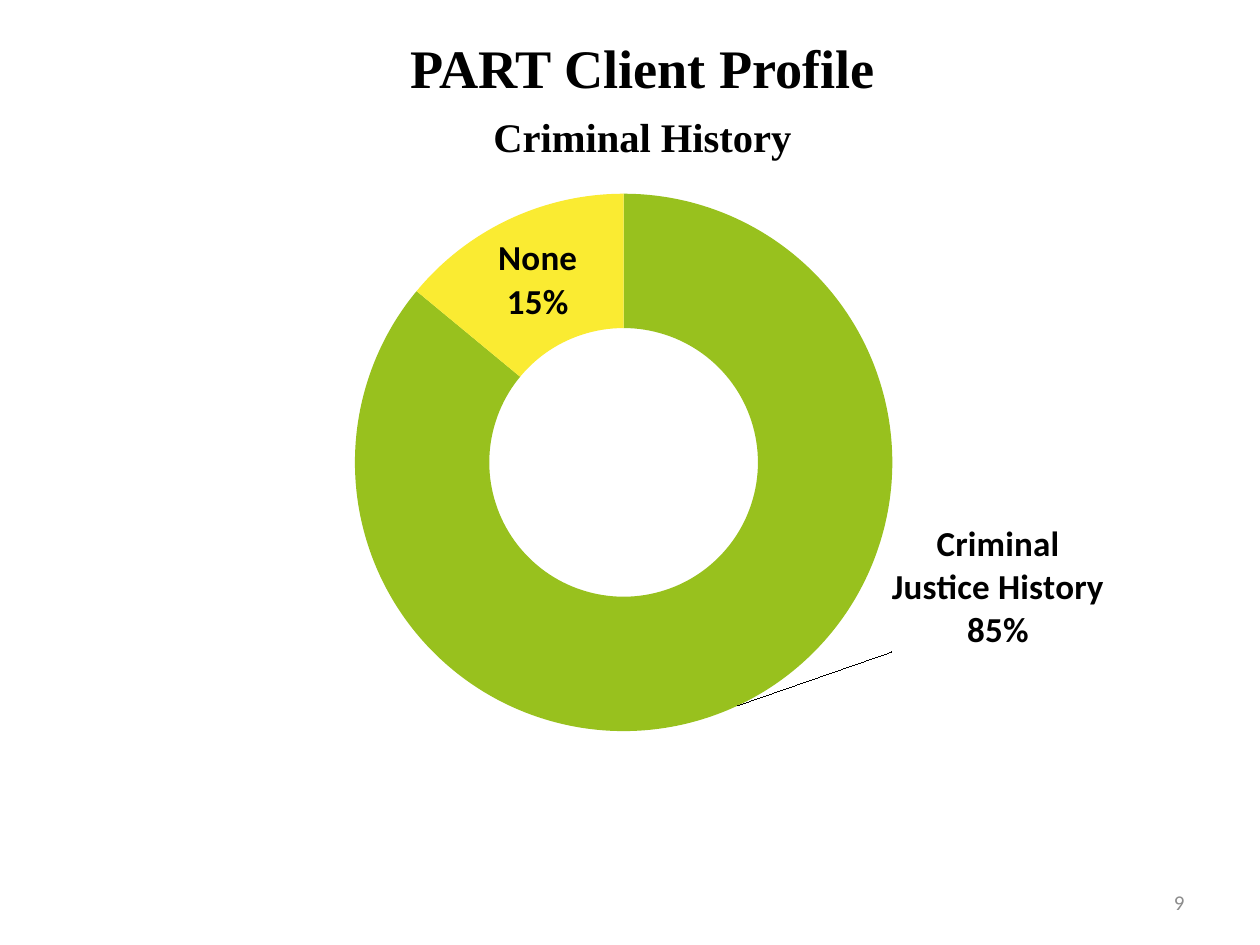
from dataclasses import dataclass

from lxml.etree import SubElement
from pptx import Presentation
from pptx.chart.data import CategoryChartData
from pptx.dml.color import RGBColor
from pptx.enum.chart import XL_CHART_TYPE
from pptx.enum.text import MSO_ANCHOR, PP_ALIGN
from pptx.oxml import parse_xml
from pptx.oxml.ns import nsdecls, qn
from pptx.util import Inches, Pt


@dataclass(frozen=True)
class Theme:
    heading_font: str = "Times New Roman"
    body_font: str = "Calibri"
    ink: str = "000000"
    muted: str = "8C8C8C"
    green: str = "98C11E"
    yellow: str = "FAEB32"
    title_size: float = 31
    subtitle_size: float = 23.2
    label_size: float = 20
    chart_size: float = 18
    number_size: float = 12


@dataclass(frozen=True)
class Area:
    left: float
    top: float
    width: float
    height: float

    def on(self, deck) -> tuple[int, int, int, int]:
        wide, high = deck.slide_width, deck.slide_height
        return (int(self.left * wide), int(self.top * high),
                int(self.width * wide), int(self.height * high))


@dataclass(frozen=True)
class Line:
    text: str
    font: str
    size: float
    color: str
    bold: bool = False
    before: float = 0


@dataclass(frozen=True)
class Segment:
    category: str
    share: str
    value: int
    color: str
    shift: tuple[float, float] | None = None


THEME = Theme()
HEADING = [
    Line("PART Client Profile", THEME.heading_font, THEME.title_size, THEME.ink, True),
    Line("Criminal History", THEME.heading_font, THEME.subtitle_size, THEME.ink, True, 7),
]
PAGE_NUMBER = [Line("9", THEME.body_font, THEME.number_size, THEME.muted)]
SEGMENTS = [
    Segment("Criminal Justice History", "85%", 86, THEME.green, (0.29, -0.09)),
    Segment("None", "15%", 14, THEME.yellow),
]
RING = {"x": 0.23, "y": 0.03, "w": 0.54, "h": 0.85}


def add_lines(frame, lines: list[Line], align: PP_ALIGN) -> None:
    """Fill a text frame with one paragraph per line."""
    for index, line in enumerate(lines):
        para = frame.add_paragraph() if index else frame.paragraphs[0]
        para.alignment = align
        if line.before:
            para.space_before = Pt(line.before)
        span = para.add_run()
        span.text = line.text
        span.font.name = line.font
        span.font.size = Pt(line.size)
        span.font.bold = line.bold
        span.font.color.rgb = RGBColor.from_string(line.color)


def add_text(deck, page, area: Area, lines: list[Line], align: PP_ALIGN,
             anchor: MSO_ANCHOR) -> None:
    """Place a wrapped text box on the page."""
    box = page.shapes.add_textbox(*area.on(deck))
    box.text_frame.word_wrap = True
    box.text_frame.vertical_anchor = anchor
    add_lines(box.text_frame, lines, align)


def manual_layout(**shares: float):
    """Return a chart layout element holding the given shares."""
    layout = parse_xml(f"<c:layout {nsdecls('c')}><c:manualLayout/></c:layout>")
    for name, share in shares.items():
        SubElement(layout[0], qn(f"c:{name}")).set("val", str(share))
    return layout


def style_segment(point, segment: Segment) -> None:
    """Color one segment and write its label."""
    point.format.fill.solid()
    point.format.fill.fore_color.rgb = RGBColor.from_string(segment.color)
    point.format.line.fill.background()
    label = point.data_label
    lines = [Line(text, THEME.body_font, THEME.label_size, THEME.ink, True)
             for text in (segment.category, segment.share)]
    add_lines(label.text_frame, lines, PP_ALIGN.CENTER)


def add_ring(deck, page, area: Area, segments: list[Segment]) -> None:
    """Draw the doughnut chart with its labels."""
    data = CategoryChartData()
    data.categories = [segment.category for segment in segments]
    data.add_series("Series 1", [segment.value for segment in segments])
    chart = page.shapes.add_chart(XL_CHART_TYPE.DOUGHNUT, *area.on(deck), data).chart
    chart.has_title = False
    chart.has_legend = False
    chart.font.name = THEME.body_font
    chart.font.size = Pt(THEME.chart_size)
    chart.font.color.rgb = RGBColor.from_string(THEME.ink)
    plot = chart.plots[0]
    plot.vary_by_categories = True
    plot._element.find(qn("c:holeSize")).set("val", "50")
    series = plot.series[0]
    labels = series.data_labels
    labels.show_value = False
    labels.show_category_name = True
    labels.show_percentage = True
    labels.font.size = Pt(THEME.label_size)
    labels.font.bold = True
    for index, segment in enumerate(segments):
        style_segment(series.points[index], segment)
    for mark, segment in zip(labels._element.findall(qn("c:dLbl")), segments):
        for name, shown in (("showVal", "0"), ("showCatName", "1"), ("showPercent", "1")):
            mark.find(qn(f"c:{name}")).set("val", shown)
        if segment.shift:
            mark.insert(1, manual_layout(x=segment.shift[0], y=segment.shift[1]))
    plot_area = plot._element.getparent()
    for old in plot_area.findall(qn("c:layout")):
        plot_area.remove(old)
    layout = manual_layout(layoutTarget="inner", xMode="edge", yMode="edge", **RING)
    plot_area.insert(0, layout)


def main() -> None:
    """Build and save the client profile slide."""
    deck = Presentation()
    deck.slide_width, deck.slide_height = Inches(10), Inches(7.5)
    page = deck.slides.add_slide(deck.slide_layouts[6])
    add_text(deck, page, Area(0.06, 0.03, 0.9, 0.12), HEADING, PP_ALIGN.CENTER, MSO_ANCHOR.TOP)
    add_ring(deck, page, Area(0.1, 0.18, 0.79, 0.68), SEGMENTS)
    add_text(deck, page, Area(0.72, 0.93, 0.23, 0.05), PAGE_NUMBER, PP_ALIGN.RIGHT,
             MSO_ANCHOR.MIDDLE)
    deck.save("out.pptx")


if __name__ == "__main__":
    main()
